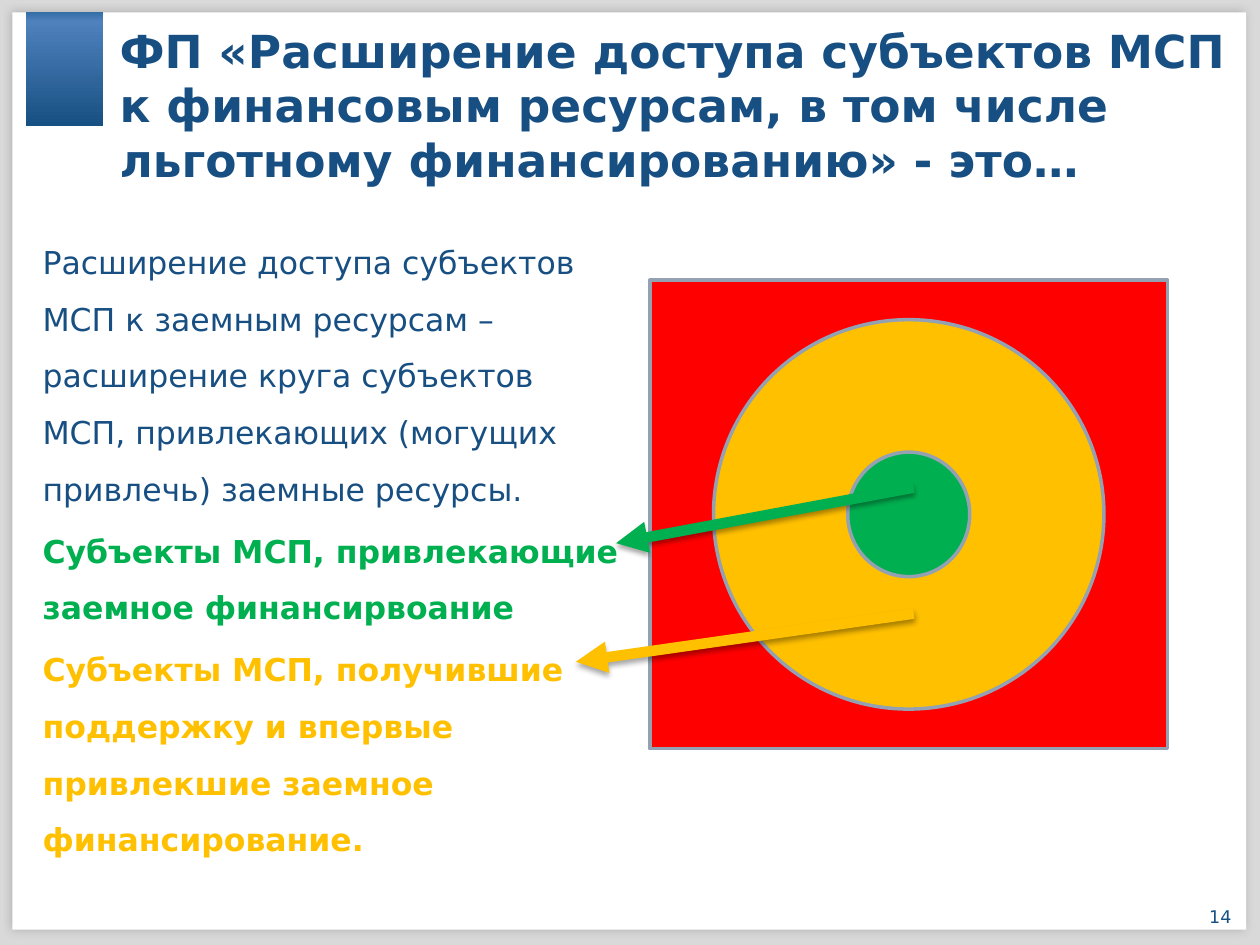
"""Builds the slide on widening SME access to financing."""
import lxml.etree
import pptx
import pptx.dml.color
import pptx.enum.shapes
import pptx.enum.text
import pptx.oxml.ns
import pptx.util

Cm = pptx.util.Cm
Pt = pptx.util.Pt
RGBColor = pptx.dml.color.RGBColor
SHAPE = pptx.enum.shapes.MSO_SHAPE
ALIGN = pptx.enum.text.PP_ALIGN
qn = pptx.oxml.ns.qn

FONT = "DejaVu Sans"
NAVY = RGBColor(0x17, 0x4F, 0x82)
GREEN = RGBColor(0x00, 0xB0, 0x50)
AMBER = RGBColor(0xFF, 0xC0, 0x00)
RED = RGBColor(0xFF, 0x00, 0x00)
WHITE = RGBColor(0xFF, 0xFF, 0xFF)
FRAME_GREY = RGBColor(0xD9, 0xD9, 0xD9)
OUTLINE = RGBColor(0x93, 0xA1, 0xB2)
SHEET_SHADOW = RGBColor(0x80, 0x80, 0x80)
ARROW_SHADOW = RGBColor(0x00, 0x00, 0x00)
TAB_STOPS = (
    (0, RGBColor(0x34, 0x6F, 0xA7)),
    (8, RGBColor(0x4F, 0x81, 0xBD)),
    (100, RGBColor(0x17, 0x50, 0x82)),
)

TITLE = (
    "ФП «Расширение доступа субъектов МСП к финансовым ресурсам, "
    "в том числе льготному финансированию» - это…"
)
DEFINITIONS = (
    ("Расширение доступа субъектов МСП к заемным ресурсам – расширение круга "
     "субъектов МСП, привлекающих (могущих привлечь) заемные ресурсы.", NAVY, False),
    ("Субъекты МСП, привлекающие заемное финансирвоание", GREEN, True),
    ("Субъекты МСП, получившие поддержку и впервые привлекшие заемное "
     "финансирование.", AMBER, True),
)
CENTRE_X, CENTRE_Y = 18.32, 10.37
NESTED_GROUPS = (
    (SHAPE.RECTANGLE, 10.44, 9.45, RED),
    (SHAPE.OVAL, 7.87, 7.85, AMBER),
    (SHAPE.OVAL, 2.46, 2.51, GREEN),
)
POINTERS = (
    ((18.42, 9.83), (12.42, 10.95), GREEN),
    ((18.42, 12.37), (11.61, 13.34), AMBER),
)


def add_child(parent, tag, **attributes):
    """Append a DrawingML element and return it."""
    child = lxml.etree.SubElement(parent, qn(tag))
    for name, value in attributes.items():
        child.set(name, str(value))
    return child


def add_shadow(shape, color, alpha, blur, distance=0, angle=0):
    """Give the shape an outer shadow."""
    effects = add_child(shape._element.spPr, "a:effectLst")
    outer = add_child(effects, "a:outerShdw", blurRad=Pt(blur), dist=Pt(distance),
                      dir=angle * 60000, algn="ctr", rotWithShape=0)
    tint = add_child(outer, "a:srgbClr", val=color)
    add_child(tint, "a:alpha", val=alpha * 1000)


def add_block(slide, preset, left, top, width, height, fill, outline=None):
    """Add a filled preset shape, outlined only when a colour is given."""
    block = slide.shapes.add_shape(preset, Cm(left), Cm(top), Cm(width), Cm(height))
    block.fill.solid()
    block.fill.fore_color.rgb = fill
    if outline is None:
        block.line.fill.background()
    else:
        block.line.color.rgb = outline
        block.line.width = Pt(2)
    return block


def add_gradient_tab(slide):
    """Add the vertical gradient tab beside the title."""
    tab = add_block(slide, SHAPE.RECTANGLE, 0.53, 0.25, 1.55, 2.29, NAVY)
    tab.shadow.inherit = False
    tab.fill.gradient()
    tab.fill.gradient_angle = 270
    stops = tab._element.spPr.find(qn("a:gradFill")).find(qn("a:gsLst"))
    for stop in list(stops):
        stops.remove(stop)
    for position, color in TAB_STOPS:
        stop = add_child(stops, "a:gs", pos=position * 1000)
        add_child(stop, "a:srgbClr", val=color)


def add_text(slide, left, top, width, height, entries, size,
             align=ALIGN.LEFT, margin=None, line_spacing=None, gap=0):
    """Add a wrapped text box from (text, colour, bold) entries."""
    box = slide.shapes.add_textbox(Cm(left), Cm(top), Cm(width), Cm(height))
    frame = box.text_frame
    frame.word_wrap = True
    if margin is not None:
        frame.margin_left = frame.margin_right = Cm(margin)
        frame.margin_top = frame.margin_bottom = Cm(margin)
    for index, (text, color, bold) in enumerate(entries):
        paragraph = frame.add_paragraph() if index else frame.paragraphs[0]
        paragraph.text = text
        paragraph.alignment = align
        if line_spacing:
            paragraph.line_spacing = line_spacing
        if index:
            paragraph.space_before = Pt(gap)
        paragraph.font.name = FONT
        paragraph.font.size = Pt(size)
        paragraph.font.bold = bold
        paragraph.font.color.rgb = color


def add_pointer(slide, start, end, color):
    """Add a thick shadowed arrow from a group to its definition."""
    pointer = slide.shapes.add_connector(
        pptx.enum.shapes.MSO_CONNECTOR.STRAIGHT, *map(Cm, start + end))
    pointer.line.color.rgb = color
    pointer.line.width = Pt(6)
    add_child(pointer.line._get_or_add_ln(), "a:tailEnd", type="triangle")
    add_shadow(pointer, ARROW_SHADOW, 35, 3.1, 1.8, 90)


def main():
    """Build and save the slide."""
    deck = pptx.Presentation()
    deck.slide_width, deck.slide_height = Cm(25.4), Cm(19.05)
    slide = deck.slides.add_slide(deck.slide_layouts[6])

    frame = add_block(slide, SHAPE.RECTANGLE, 0, 0, 25.4, 19.05, FRAME_GREY)
    frame.shadow.inherit = False
    sheet = add_block(slide, SHAPE.RECTANGLE, 0.25, 0.25, 24.87, 18.49, WHITE)
    add_shadow(sheet, SHEET_SHADOW, 46, 5)
    add_gradient_tab(slide)

    add_text(slide, 2.41, 0.46, 22.38, 2.08, [(TITLE, NAVY, True)], 26, margin=0)
    add_text(slide, 24.08, 18.14, 1.04, 0.58, [("14", NAVY, False)], 10, ALIGN.CENTER)
    add_text(slide, 0.61, 4.39, 12.14, 13.2, DEFINITIONS, 18, line_spacing=1.5, gap=3)

    for preset, width, height, color in NESTED_GROUPS:
        group = add_block(slide, preset, CENTRE_X - width / 2, CENTRE_Y - height / 2,
                          width, height, color, OUTLINE)
        group.shadow.inherit = False
    for start, end, color in POINTERS:
        add_pointer(slide, start, end, color)

    deck.save("out.pptx")


if __name__ == "__main__":
    main()
